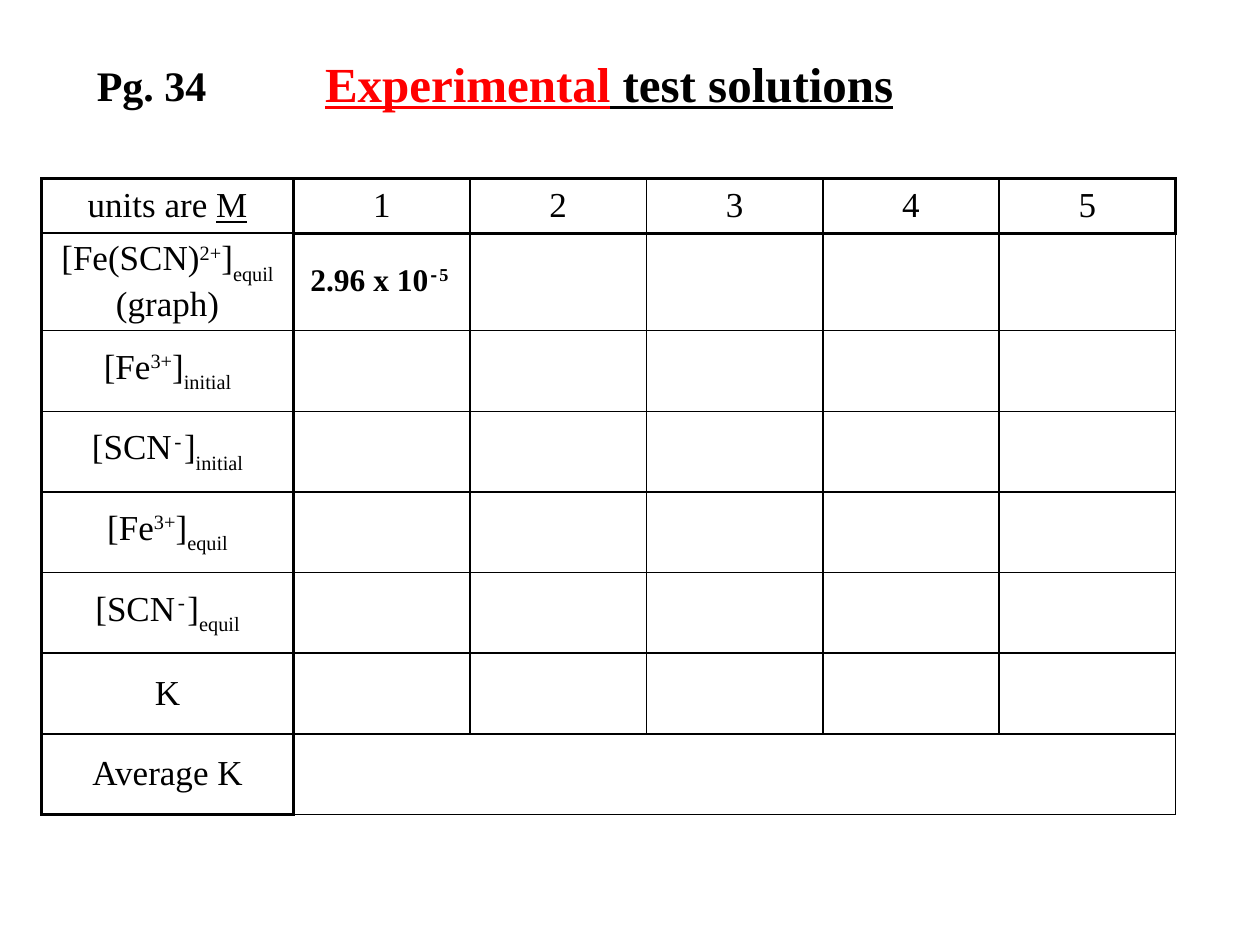
from pptx import Presentation
from pptx.dml.color import RGBColor
from pptx.enum.text import MSO_ANCHOR, MSO_AUTO_SIZE, PP_ALIGN
from pptx.oxml.ns import qn
from pptx.util import Inches, Pt
from lxml import etree

CENTER = PP_ALIGN.CENTER
MIDDLE = MSO_ANCHOR.MIDDLE
GROW = MSO_AUTO_SIZE.SHAPE_TO_FIT_TEXT

COLORS = {"black": "000000", "red": "FF0000"}
FONT, MINUS_FONT = "Times New Roman", "Courier New"
THIN, THICK = 1, 2

SUP, SUB = 30000, -30000
CHARGE = ("3+", {"baseline": SUP})
MINUS = ("-", {"baseline": SUP, "font": MINUS_FONT})
INITIAL = ("initial", {"baseline": SUB})
EQUIL = ("equil", {"baseline": SUB})

HEADER = [["units are ", ("M", {"underline": True})], *([str(n)] for n in range(1, 6))]
ROW_LABELS = [
    ["[Fe(SCN)", ("2+", {"baseline": SUP}), "]", EQUIL, " (graph)"],
    ["[Fe", CHARGE, "]", INITIAL],
    ["[SCN", MINUS, "]", INITIAL],
    ["[Fe", CHARGE, "]", EQUIL],
    ["[SCN", MINUS, "]", EQUIL],
    ["K"],
    ["Average K"],
]
FIRST_RESULT = ["2.96 x 10", MINUS, ("5 ", {"baseline": SUP})]
COL_WIDTHS = [2] + [1.4] * 5
ROW_HEIGHTS = [0.43, 0.77] + [0.64] * 6


def add_run(p, text, size, bold=False, color="black", font=FONT, underline=False, baseline=0):
    """Append one formatted run, raised or lowered by its baseline."""
    r = p.add_run()
    r.text = text
    r.font.name = font
    r.font.size = Pt(size)
    r.font.bold = bold
    r.font.underline = underline
    r.font.color.rgb = RGBColor.from_string(COLORS[color])
    if baseline:
        r.font._element.set("baseline", str(baseline))


def add_runs(p, parts, size, bold=False):
    """Append parts that are plain strings or pairs of text and run options."""
    for part in parts:
        text, options = (part, {}) if isinstance(part, str) else part
        add_run(p, text, size, bold, **options)


def add_text(s, box, parts, size, margin=None):
    """Add a bold one-line text box."""
    tf = s.shapes.add_textbox(*(Inches(v) for v in box)).text_frame
    tf.word_wrap = True
    tf.auto_size = GROW
    if margin is not None:
        tf.vertical_anchor = MIDDLE
        tf.margin_left = tf.margin_right = tf.margin_top = tf.margin_bottom = Inches(margin)
    add_runs(tf.paragraphs[0], parts, size, bold=True)


def set_borders(cell, thick_sides):
    """Draw the four borders of a cell, thick on the named sides."""
    tcPr = cell._tc.get_or_add_tcPr()
    for side in "LRTB":
        width = THICK if side in thick_sides else THIN
        ln = etree.SubElement(tcPr, qn(f"a:ln{side}"), w=str(Pt(width)))
        fill = etree.SubElement(ln, qn("a:solidFill"))
        etree.SubElement(fill, qn("a:srgbClr"), val=COLORS["black"])


def thick_sides(row, col):
    """Return the thick sides: around the header row and the label column."""
    last_row, last_col = len(ROW_HEIGHTS) - 1, len(COL_WIDTHS) - 1
    rules = {
        "L": col <= 1,
        "R": col == 0 or (row == 0 and col == last_col),
        "T": row == 0 or (row == 1 and col > 0),
        "B": (row == 0 and col > 0) or (row == last_row and col == 0),
    }
    return [side for side, thick in rules.items() if thick]


def fill_cell(cell, parts, size=20, bold=False):
    """Write centred text into a cell."""
    cell.vertical_anchor = MIDDLE
    p = cell.text_frame.paragraphs[0]
    p.alignment = CENTER
    add_runs(p, parts, size, bold)


def add_results_table(s):
    """Add the concentration table with its merged average row."""
    n_rows, n_cols = len(ROW_HEIGHTS), len(COL_WIDTHS)
    table = s.shapes.add_table(n_rows, n_cols, Inches(0.33), Inches(1.42),
                               Inches(sum(COL_WIDTHS)), Inches(sum(ROW_HEIGHTS))).table
    table.first_row = table.horz_banding = False
    for column, width in zip(table.columns, COL_WIDTHS):
        column.width = Inches(width)
    for i, height in enumerate(ROW_HEIGHTS):
        table.rows[i].height = Inches(height)
        for j in range(n_cols):
            cell = table.cell(i, j)
            set_borders(cell, thick_sides(i, j))
            cell.fill.background()
    table.cell(n_rows - 1, 1).merge(table.cell(n_rows - 1, n_cols - 1))
    for j, parts in enumerate(HEADER):
        fill_cell(table.cell(0, j), parts)
    for i, parts in enumerate(ROW_LABELS, start=1):
        fill_cell(table.cell(i, 0), parts)
    fill_cell(table.cell(1, 1), FIRST_RESULT, size=18, bold=True)


def main():
    """Build the slide and save it."""
    prs = Presentation()
    prs.slide_width, prs.slide_height = Inches(10), Inches(7.5)
    s = prs.slides.add_slide(prs.slide_layouts[6])
    add_results_table(s)
    title = [("Experimental", {"color": "red", "underline": True}),
             (" test solutions", {"underline": True})]
    add_text(s, (2.58, 0.42, 5.25, 0.47), title, 28, margin=0)
    add_text(s, (0.67, 0.42, 1.08, 0.5), ["Pg. 34"], 24)
    prs.save("out.pptx")


if __name__ == "__main__":
    main()
